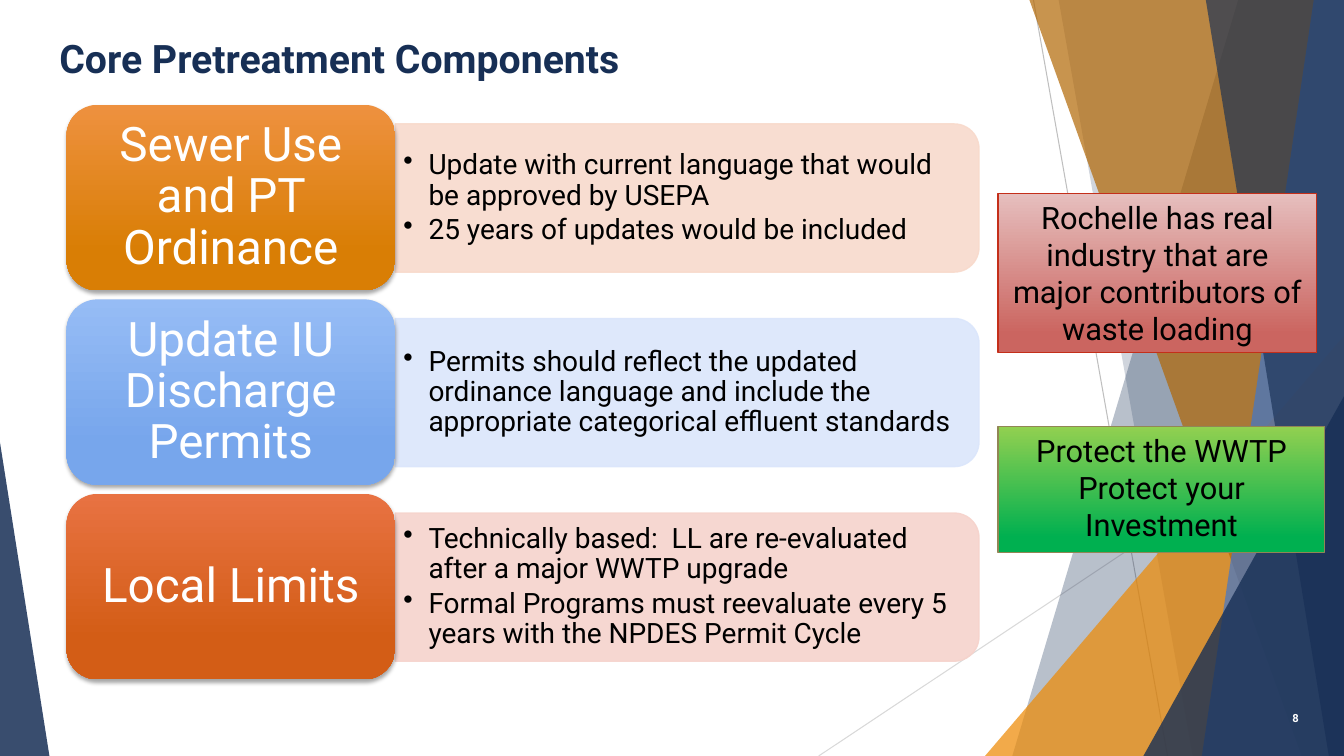
from lxml import etree
from pptx import Presentation
from pptx.dml.color import RGBColor
from pptx.enum import shapes, text
from pptx.oxml import ns
from pptx.util import Inches, Pt

theme = {
    "font": "Roboto",
    "navy": "172F55", "orange": "ED8A05", "bronze": "B26704", "blue": "4177CC",
    "black": "000000", "white": "FFFFFF",
    "guide_dark": "BFBFBF", "guide_light": "D9D9D9",
    "amber_card": ("EE913F", "D97E05"), "amber_panel": "F8DACC",
    "sky_card": ("96BCF5", "77A6EC"), "sky_panel": "DBE6FB",
    "rust_card": ("E87242", "D35D16"), "rust_panel": "F6D3CC",
    "green_note": ("92D050", "00B050"), "green_edge": "918655",
    "red_note": ("E6BFBE", "CB6560"), "red_edge": "C42F1A",
    "title_size": 28, "card_size": 34, "bullet_size": 20, "note_size": 22, "number_size": 8,
}


def paint(shape, colors, opacity=100, end=1, edge=None):
    shape.shadow.inherit = False
    if isinstance(colors, tuple):
        shape.fill.gradient()
        shape.fill.gradient_angle = 270
        for stop, color, position in zip(shape.fill.gradient_stops, colors, (0, end)):
            stop.color.rgb = RGBColor.from_string(color)
            stop.position = position
    else:
        shape.fill.solid()
        shape.fill.fore_color.rgb = RGBColor.from_string(colors)
    if edge:
        shape.line.color.rgb = RGBColor.from_string(edge)
        shape.line.width = Pt(1)
    else:
        shape.line.fill.background()
    if opacity < 100:
        for color in shape._element.spPr.iter(ns.qn("a:srgbClr")):
            etree.SubElement(color, ns.qn("a:alpha"), val=str(opacity * 1000))


def write(shape, lines, size, color, align, anchor, margins=(0.1, 0.05), spacing=1, bold=False, bullets=False):
    frame = shape.text_frame
    frame.word_wrap = True
    frame.vertical_anchor = anchor
    frame.margin_left = frame.margin_right = Inches(margins[0])
    frame.margin_top = frame.margin_bottom = Inches(margins[1])
    for index, line in enumerate(lines):
        paragraph = frame.paragraphs[0] if index == 0 else frame.add_paragraph()
        paragraph.text = line
        paragraph.alignment = align
        paragraph.line_spacing = spacing
        if bullets:
            paragraph.space_after = Pt(3)
            properties = paragraph._p.get_or_add_pPr()
            properties.set("marL", str(Inches(0.25)))
            properties.set("indent", str(-Inches(0.25)))
            etree.SubElement(properties, ns.qn("a:buChar"), char="•")
        paragraph.font.name = theme["font"]
        paragraph.font.size = Pt(size)
        paragraph.font.bold = bold
        paragraph.font.color.rgb = RGBColor.from_string(color)


LEFT, CENTER, RIGHT = text.PP_ALIGN.LEFT, text.PP_ALIGN.CENTER, text.PP_ALIGN.RIGHT
TOP, MIDDLE = text.MSO_ANCHOR.TOP, text.MSO_ANCHOR.MIDDLE
WIDTH, HEIGHT = 13.33, 7.5

presentation = Presentation()
presentation.slide_width = Inches(WIDTH)
presentation.slide_height = Inches(HEIGHT)
slide = presentation.slides.add_slide(presentation.slide_layouts[6])

guides = [
    (10.25, 0, 11.58, HEIGHT, theme["guide_dark"]),
    (WIDTH, 4.03, 8.12, HEIGHT, theme["guide_light"]),
]
for x1, y1, x2, y2, color in guides:
    guide = slide.shapes.add_connector(
        shapes.MSO_CONNECTOR.STRAIGHT, Inches(x1), Inches(y1), Inches(x2), Inches(y2))
    guide.line.color.rgb = RGBColor.from_string(color)
    guide.line.width = Pt(0.75)
    etree.SubElement(guide._element.spPr, ns.qn("a:effectLst"))

facets = [
    ("band", (12.28, 10.04), theme["navy"], 30),
    ("band", (10.5, 11.83), theme["navy"], 20),
    ("triangle", (9.77, 3.33, 3.56, 1), theme["orange"], 72),
    ("band", (10.21, 12.91), theme["bronze"], 70),
    ("band", (13.03, 11.92), theme["blue"], 70),
    ("band", (11.96, 13.18), theme["navy"], 65),
    ("triangle", (11.34, 3.93, 1.99, 1), theme["navy"], 80),
    ("triangle", (0, 4.39, 0.49, 0), theme["navy"], 85),
]
for kind, geometry, color, opacity in facets:
    if kind == "band":
        top_x, bottom_x = geometry
        builder = slide.shapes.build_freeform(Inches(top_x), 0)
        corners = [(WIDTH, 0), (WIDTH, HEIGHT), (bottom_x, HEIGHT)]
        builder.add_line_segments([(Inches(x), Inches(y)) for x, y in corners], close=True)
        facet = builder.convert_to_shape()
    else:
        left, top, width, apex = geometry
        facet = slide.shapes.add_shape(
            shapes.MSO_SHAPE.ISOSCELES_TRIANGLE,
            Inches(left), Inches(top), Inches(width), Inches(HEIGHT - top))
        facet.adjustments[0] = apex
    paint(facet, color, opacity)

components = [
    ("Sewer Use and PT Ordinance", theme["amber_card"], theme["amber_panel"],
     ["Update with current language that would be approved by USEPA",
      "25 years of updates would be included"]),
    ("Update IU Discharge Permits", theme["sky_card"], theme["sky_panel"],
     ["Permits should reflect the updated ordinance language and include the "
      "appropriate categorical effluent standards"]),
    ("Local Limits", theme["rust_card"], theme["rust_panel"],
     ["Technically based:  LL are re-evaluated after a major WWTP upgrade",
      "Formal Programs must reevaluate every 5 years with the NPDES Permit Cycle"]),
]
for row, (name, card_colors, panel_color, points) in enumerate(components):
    top = 1.04 + 1.93 * row

    panel = slide.shapes.add_shape(
        shapes.MSO_SHAPE.ROUND_2_SAME_RECTANGLE,
        Inches(6.08), Inches(top - 1.97), Inches(1.47), Inches(5.79))
    panel.rotation = 90
    paint(panel, panel_color, 90, edge=panel_color)

    details = slide.shapes.add_textbox(Inches(3.92), Inches(top + 0.26), Inches(5.72), Inches(1.33))
    write(details, points, theme["bullet_size"], theme["black"], LEFT, MIDDLE,
          (0.08, 0.04), 0.9, bullets=True)

    card = slide.shapes.add_shape(
        shapes.MSO_SHAPE.ROUNDED_RECTANGLE, Inches(0.66), Inches(top), Inches(3.26), Inches(1.84))
    paint(card, card_colors, end=0.78)
    shadow = etree.SubElement(
        card._element.spPr.find(ns.qn("a:effectLst")), ns.qn("a:outerShdw"),
        blurRad=str(Pt(3)), dist=str(Pt(2)), dir="5400000", rotWithShape="0")
    shadow_color = etree.SubElement(shadow, ns.qn("a:srgbClr"), val=theme["black"])
    etree.SubElement(shadow_color, ns.qn("a:alpha"), val="35000")
    write(card, [name], theme["card_size"], theme["white"], CENTER, MIDDLE, (0.14, 0.07), 0.9)

title = slide.shapes.add_textbox(Inches(0.49), Inches(0.29), Inches(10.28), Inches(0.5))
write(title, ["Core Pretreatment Components"], theme["title_size"], theme["navy"], LEFT, TOP, bold=True)

number = slide.shapes.add_textbox(Inches(12.23), Inches(6.92), Inches(0.75), Inches(0.4))
write(number, ["8"], theme["number_size"], theme["white"], RIGHT, MIDDLE, bold=True)

notes = [
    (4.23, 3.24, 1.25, theme["green_note"], theme["green_edge"],
     ["Protect the WWTP", "Protect your Investment"]),
    (1.92, 3.16, 1.58, theme["red_note"], theme["red_edge"],
     ["Rochelle has real industry that are major contributors of waste loading"]),
]
for top, width, height, colors, edge, lines in notes:
    note = slide.shapes.add_shape(
        shapes.MSO_SHAPE.RECTANGLE, Inches(9.9), Inches(top), Inches(width), Inches(height))
    paint(note, colors, end=0.88, edge=edge)
    write(note, lines, theme["note_size"], theme["black"], CENTER, TOP)

presentation.save("out.pptx")
